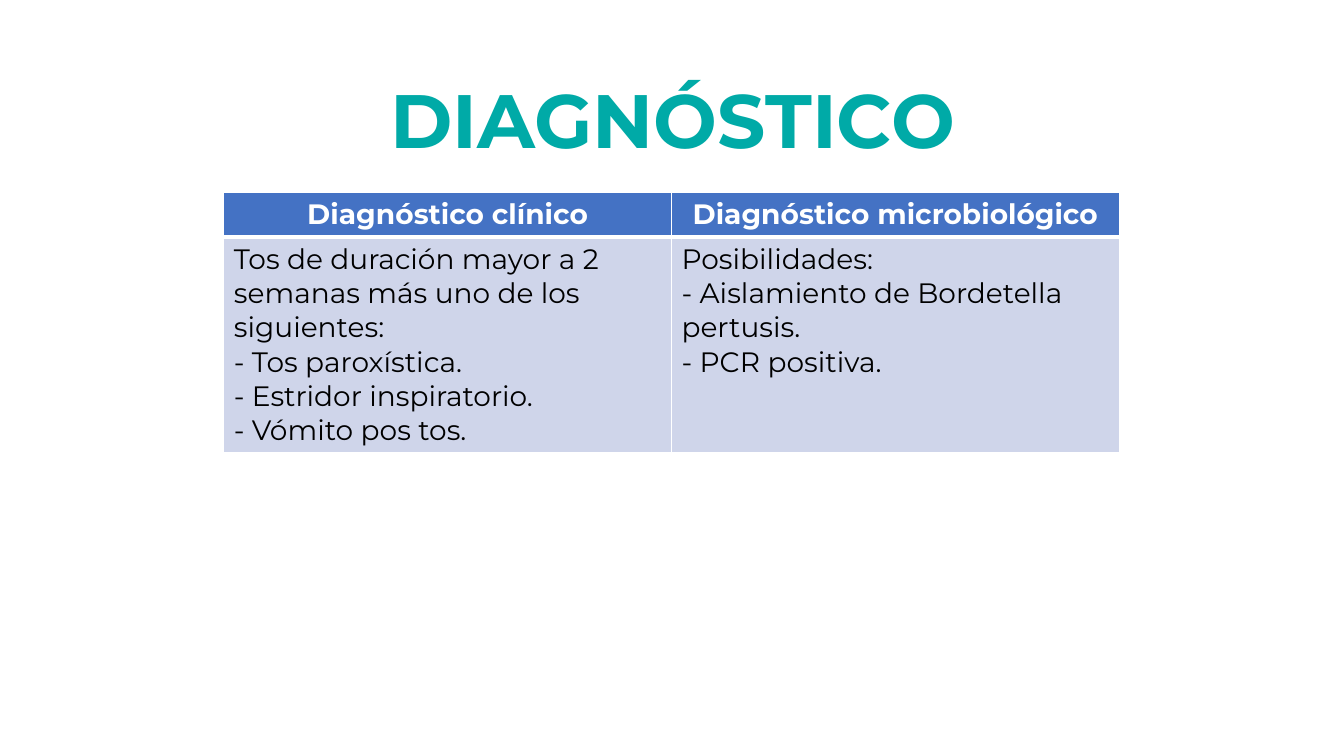
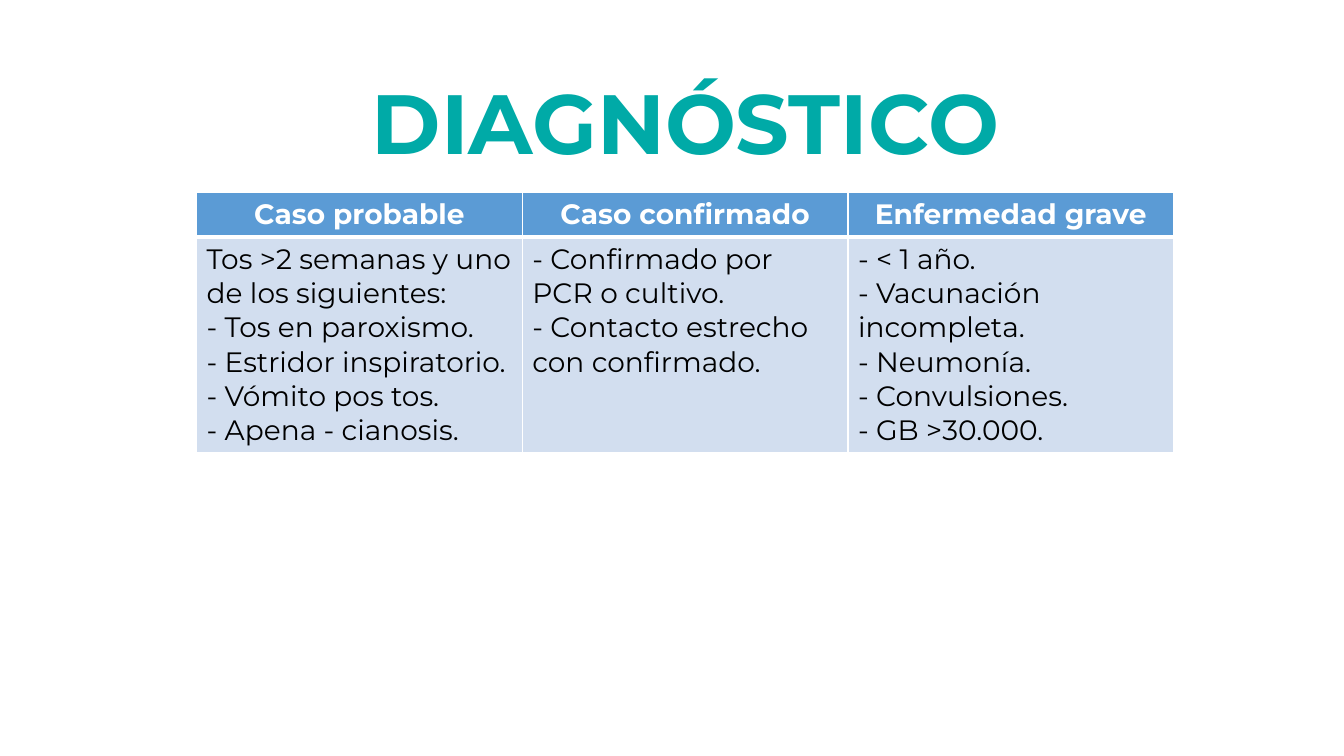
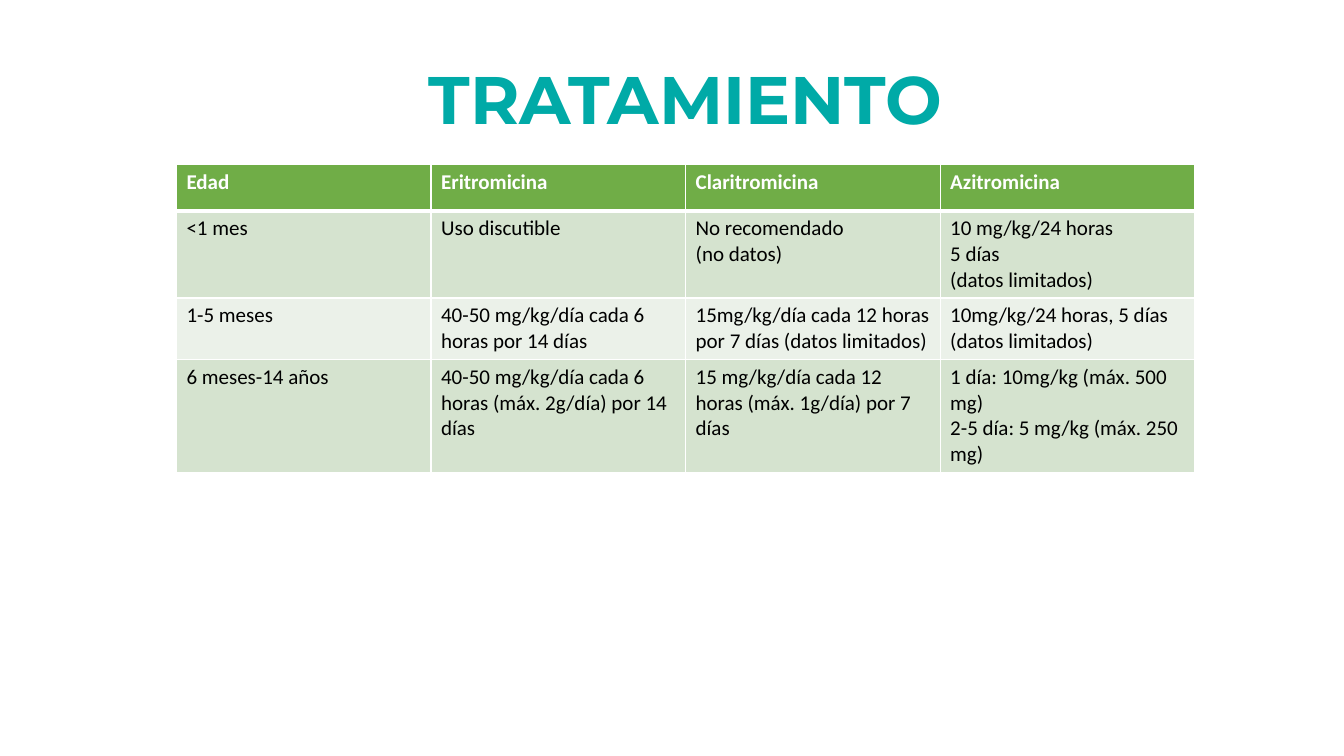
from lxml.etree import SubElement
from pptx import Presentation
from pptx.dml.color import RGBColor
from pptx.enum.text import MSO_ANCHOR, MSO_AUTO_SIZE, PP_ALIGN
from pptx.oxml.ns import qn
from pptx.util import Emu, Pt

PX = 9144
TITLE_FONT = "Montserrat"
TITLE_COLOR = "00AAA7"
WHITE = "FFFFFF"
BLACK = "000000"
TITLE_ONLY = 5

DIAGNOSIS = [
    ["Diagnóstico clínico", "Diagnóstico microbiológico"],
    ["Tos de duración mayor a 2 semanas más uno de los siguientes:\n"
     "- Tos paroxística.\n- Estridor inspiratorio.\n- Vómito pos tos.",
     "Posibilidades:\n- Aislamiento de Bordetella pertusis.\n- PCR positiva."],
]
CASES = [
    ["Caso probable", "Caso confirmado", "Enfermedad grave"],
    ["Tos >2 semanas y uno de los siguientes:\n- Tos en paroxismo.\n"
     "- Estridor inspiratorio.\n- Vómito pos tos.\n- Apena - cianosis.",
     "- Confirmado por PCR o cultivo.\n- Contacto estrecho con confirmado.",
     "- < 1 año.\n- Vacunación incompleta.\n- Neumonía.\n- Convulsiones.\n- GB >30.000."],
]
TREATMENT = [
    ["Edad", "Eritromicina", "Claritromicina", "Azitromicina"],
    ["<1 mes", "Uso discutible", "No recomendado\n(no datos)",
     "10 mg/kg/24 horas\n5 días\n(datos limitados)"],
    ["1-5 meses", "40-50 mg/kg/día cada 6 horas por 14 días",
     "15mg/kg/día cada 12 horas por 7 días (datos limitados)",
     "10mg/kg/24 horas, 5 días\n(datos limitados)"],
    ["6 meses-14 años", "40-50 mg/kg/día cada 6 horas (máx. 2g/día) por 14 días",
     "15 mg/kg/día cada 12 horas (máx. 1g/día) por 7 días",
     "1 día: 10mg/kg (máx. 500 mg)\n2-5 día: 5 mg/kg (máx. 250 mg)"],
]


def px(length):
    return Emu(length * PX)


def color(value):
    return RGBColor.from_string(value)


def format_text(frame, font_name, size, value, bold, align):
    for paragraph in frame.paragraphs:
        paragraph.alignment = align
        for run in paragraph.runs:
            run.font.name = font_name
            run.font.size = Pt(size)
            run.font.bold = bold
            run.font.color.rgb = color(value)


def add_title(slide, box, text, size):
    title = slide.shapes.title
    title.left, title.top, title.width, title.height = map(px, box)
    frame = title.text_frame
    frame.text = text
    frame.word_wrap = True
    frame.auto_size = MSO_AUTO_SIZE.NONE
    frame.vertical_anchor = MSO_ANCHOR.TOP
    frame.paragraphs[0].line_spacing = 0.9
    format_text(frame, TITLE_FONT, size, TITLE_COLOR, True, PP_ALIGN.CENTER)


def add_borders(cell, top, bottom):
    properties = cell._tc.get_or_add_tcPr()
    for side, width in (("L", 1), ("R", 1), ("T", top), ("B", bottom)):
        border = SubElement(properties, qn(f"a:ln{side}"), w=str(Pt(width)))
        fill = SubElement(border, qn("a:solidFill"))
        SubElement(fill, qn("a:srgbClr"), val=WHITE)


def add_grid(slide, box, content, row_heights, fills, font_name, size, header_align):
    left, top, width, height = box
    grid = slide.shapes.add_table(
        len(content), len(content[0]), px(left), px(top), px(width), px(height)).table
    grid.horz_banding = False
    header_fill, *bands = fills
    for row_index, (entries, row_height) in enumerate(zip(content, row_heights)):
        grid.rows[row_index].height = px(row_height)
        header = row_index == 0
        band = header_fill if header else bands[(row_index - 1) % len(bands)]
        for column_index, entry in enumerate(entries):
            cell = grid.cell(row_index, column_index)
            add_borders(cell, 3 if row_index == 1 else 1, 3 if header else 1)
            cell.fill.solid()
            cell.fill.fore_color.rgb = color(band)
            cell.text_frame.text = entry
            format_text(cell.text_frame, font_name, size, WHITE if header else BLACK,
                        header, header_align if header else PP_ALIGN.LEFT)


def add_table_slide(deck, title, title_box, title_size, table_box, content, row_heights,
                    fills, font_name="Montserrat", size=20, header_align=PP_ALIGN.CENTER):
    slide = deck.slides.add_slide(deck.slide_layouts[TITLE_ONLY])
    add_title(slide, title_box, title, title_size)
    add_grid(slide, table_box, content, row_heights, fills, font_name, size, header_align)


def main():
    deck = Presentation()
    deck.slide_width, deck.slide_height = px(1333), px(750)
    add_table_slide(deck, "DIAGNÓSTICO", (92, 78, 1150, 145), 54,
                    (222, 191, 888, 253), DIAGNOSIS, (43, 210), ("4472C4", "CFD5EA"))
    add_table_slide(deck, "DIAGNÓSTICO", (105, 76, 1150, 145), 60,
                    (195, 191, 969, 253), CASES, (43, 210), ("5B9BD5", "D2DEEF"))
    add_table_slide(deck, "TRATAMIENTO", (105, 61, 1150, 145), 48,
                    (175, 163, 1010, 305), TREATMENT, (46, 86, 61, 112),
                    ("70AD47", "D5E3CF", "EBF1E9"), "Calibri", 15, PP_ALIGN.LEFT)
    deck.save("out.pptx")


if __name__ == "__main__":
    main()
